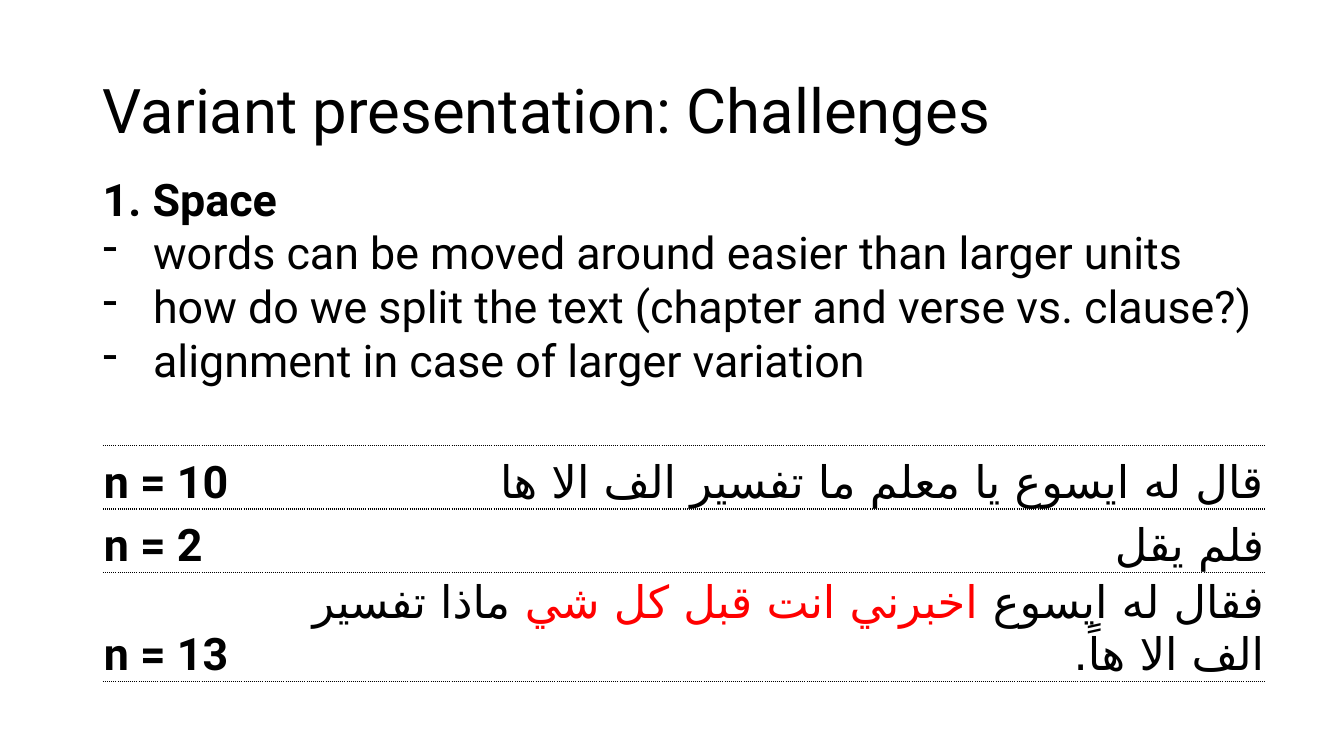
"""Build the slide on the challenges of presenting variants."""
from lxml import etree
from pptx import Presentation
from pptx.dml.color import RGBColor
from pptx.enum import text as t
from pptx.oxml import ns
from pptx.util import Inches, Pt

HUES = {"ink": "000000", "mark": "FF0000", "page": "FFFFFF"}
FONT = "Roboto"
SCRIPT = "DejaVu Sans"


def add_run(para, words, size=32, bold=False, hue="ink"):
    """Add one styled run to a paragraph."""
    run = para.add_run()
    run.text = words
    run.font.name = FONT
    run.font.size = Pt(size)
    run.font.bold = bold
    run.font.color.rgb = RGBColor.from_string(HUES[hue])
    face = etree.SubElement(run.font._element, ns.qn("a:cs"))
    face.set("typeface", SCRIPT)


def add_edge(cell, tag, spot, dots):
    """Give one side of a cell a dotted line or none."""
    props = cell._tc.get_or_add_tcPr()
    line = etree.Element(ns.qn(tag), w=str(Pt(1)))
    if dots:
        fill = etree.SubElement(line, ns.qn("a:solidFill"))
        etree.SubElement(fill, ns.qn("a:srgbClr"), val=HUES["ink"])
        etree.SubElement(line, ns.qn("a:prstDash"), val="sysDot")
    else:
        etree.SubElement(line, ns.qn("a:noFill"))
    props.insert(spot, line)


deck = Presentation()
deck.slide_width, deck.slide_height = Inches(13.33), Inches(7.5)
slide = deck.slides.add_slide(deck.slide_layouts[5])

title = slide.shapes.title
title.left, title.top = Inches(0.92), Inches(0.4)
title.width, title.height = Inches(11.5), Inches(1.45)
frame = title.text_frame
frame.vertical_anchor = t.MSO_ANCHOR.MIDDLE
para = frame.paragraphs[0]
para.alignment = t.PP_ALIGN.LEFT
para.line_spacing = 0.9
add_run(para, "Variant presentation: Challenges", 44)

box = slide.shapes.add_textbox(Inches(0.92), Inches(1.65), Inches(12.14), Inches(2.26))
frame = box.text_frame
frame.word_wrap = True
frame.auto_size = t.MSO_AUTO_SIZE.SHAPE_TO_FIT_TEXT
add_run(frame.paragraphs[0], "1. Space", bold=True)
points = [
    "words can be moved around easier than larger units",
    "how do we split the text (chapter and verse vs. clause?)",
    "alignment in case of larger variation",
]
for point in points:
    para = frame.add_paragraph()
    props = para._p.get_or_add_pPr()
    props.set("marL", str(Inches(0.5)))
    props.set("indent", str(-Inches(0.5)))
    etree.SubElement(props, ns.qn("a:buFontTx"))
    etree.SubElement(props, ns.qn("a:buChar"), char="-")
    add_run(para, point)

rows = [
    ("n = 10", [("قال له ايسوع يا معلم ما تفسير الف الا ها", "ink")]),
    ("n = 2", [("فلم يقل", "ink")]),
    ("n = 13", [
        ("فقال له ايسوع ", "ink"),
        ("اخبرني انت قبل كل شي ", "mark"),
        ("ماذا تفسير الف الا هاً.", "ink"),
    ]),
]
grid = slide.shapes.add_table(
    len(rows), 2, Inches(1.02), Inches(4.42), Inches(11.53), Inches(1.98)
).table
grid.first_row = grid.horz_banding = False
for col, width in zip(grid.columns, (1.7, 9.83)):
    col.width = Inches(width)
for row, height in zip(grid.rows, (0.63, 0.63, 0.72)):
    row.height = Inches(height)

edges = [("a:lnL", False), ("a:lnR", False), ("a:lnT", True), ("a:lnB", True)]
sides = (t.PP_ALIGN.LEFT, t.PP_ALIGN.RIGHT)
for row, (count, parts) in zip(grid.rows, rows):
    for cell, runs, side in zip(row.cells, ([(count, "ink")], parts), sides):
        cell.fill.solid()
        cell.fill.fore_color.rgb = RGBColor.from_string(HUES["page"])
        cell.vertical_anchor = t.MSO_ANCHOR.BOTTOM
        cell.margin_left = cell.margin_right = cell.margin_top = Inches(0.01)
        cell.margin_bottom = 0
        for spot, (tag, dots) in enumerate(edges):
            add_edge(cell, tag, spot, dots)
        para = cell.text_frame.paragraphs[0]
        para.alignment = side
        para._p.get_or_add_pPr().set("rtl", "1")
        for words, hue in runs:
            add_run(para, words, bold=side == t.PP_ALIGN.LEFT, hue=hue)

deck.save("out.pptx")
